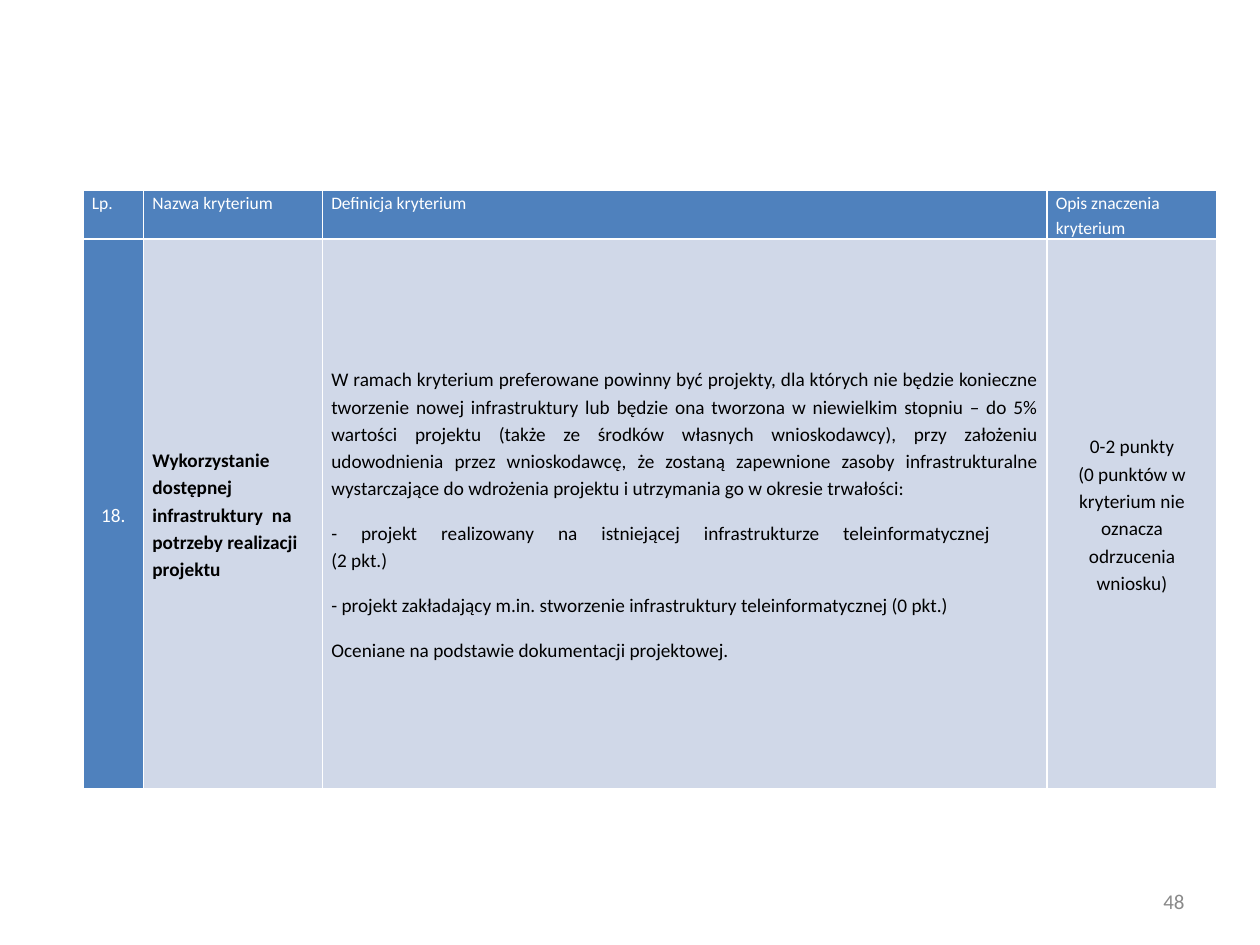
from dataclasses import dataclass

from lxml import etree
from pptx import Presentation
from pptx.dml.color import RGBColor
from pptx.enum import text as t
from pptx.oxml import ns
from pptx.util import Inches, Pt

FONT = "Calibri"
WHITE, BLACK, GREY = "FFFFFF", "000000", "898989"
BLUE, PALE = "4F81BD", "D0D8E8"
LEFT, CENTER, RIGHT, JUSTIFY = (
    t.PP_ALIGN.LEFT, t.PP_ALIGN.CENTER, t.PP_ALIGN.RIGHT, t.PP_ALIGN.JUSTIFY)
TOP, MIDDLE = t.MSO_ANCHOR.TOP, t.MSO_ANCHOR.MIDDLE


@dataclass
class CellSpec:
    paragraphs: list[str]
    fill: str = PALE
    color: str = BLACK
    size: float = 11
    align: t.PP_ALIGN = LEFT
    anchor: t.MSO_ANCHOR = MIDDLE
    space_after: float = 10
    bold: bool = False


def rgb(value: str) -> RGBColor:
    return RGBColor.from_string(value)


def style(paragraph, size: float, color: str, align, bold: bool = False) -> None:
    paragraph.alignment = align
    font = paragraph.font
    font.name, font.size, font.bold = FONT, Pt(size), bold
    font.color.rgb = rgb(color)


def add_borders(cell, color: str = WHITE, width: float = 1) -> None:
    properties = cell._tc.get_or_add_tcPr()
    for index, side in enumerate(("a:lnL", "a:lnR", "a:lnT", "a:lnB")):
        line = etree.Element(ns.qn(side), w=str(Pt(width)))
        fill = etree.SubElement(line, ns.qn("a:solidFill"))
        etree.SubElement(fill, ns.qn("a:srgbClr"), val=color)
        properties.insert(index, line)


def fill_cell(cell, spec: CellSpec) -> None:
    cell.margin_left = cell.margin_right = Inches(0.07)
    cell.margin_top = cell.margin_bottom = 0
    cell.vertical_anchor = spec.anchor
    cell.fill.solid()
    cell.fill.fore_color.rgb = rgb(spec.fill)
    add_borders(cell)
    frame = cell.text_frame
    for index, wording in enumerate(spec.paragraphs):
        paragraph = frame.add_paragraph() if index else frame.paragraphs[0]
        paragraph.text = wording
        paragraph.line_spacing = 1.15
        paragraph.space_after = Pt(spec.space_after)
        style(paragraph, spec.size, spec.color, spec.align, spec.bold)


HEADINGS = ["Lp.", "Nazwa kryterium", "Definicja kryterium",
            "Opis znaczenia kryterium"]
DEFINITION = [
    "W ramach kryterium preferowane powinny być projekty, dla których nie będzie "
    "konieczne tworzenie nowej infrastruktury lub będzie ona tworzona w niewielkim "
    "stopniu – do 5% wartości projektu (także ze środków własnych wnioskodawcy), "
    "przy założeniu udowodnienia przez wnioskodawcę, że zostaną zapewnione zasoby "
    "infrastrukturalne wystarczające do wdrożenia projektu i utrzymania go w okresie "
    "trwałości: ",
    "- projekt realizowany na istniejącej infrastrukturze teleinformatycznej  \v(2 pkt.)",
    "- projekt zakładający m.in. stworzenie infrastruktury teleinformatycznej (0 pkt.)",
    "Oceniane na podstawie dokumentacji projektowej.",
]
SCORING = ["0-2 punkty", "(0 punktów w", "kryterium nie", "oznacza",
           "odrzucenia", "wniosku)"]

ROWS = [
    [CellSpec([heading], BLUE, WHITE, 10, anchor=TOP) for heading in HEADINGS],
    [
        CellSpec(["18."], BLUE, WHITE, align=CENTER, space_after=0),
        CellSpec(["Wykorzystanie dostępnej infrastruktury  na potrzeby realizacji "
                  "projektu"], bold=True),
        CellSpec(DEFINITION, align=JUSTIFY),
        CellSpec(SCORING, align=CENTER, space_after=0),
    ],
]
COLUMN_WIDTHS = [0.48, 1.42, 5.75, 1.35]
ROW_HEIGHTS = [0.38, 4.36]


def main() -> None:
    prs = Presentation()
    prs.slide_width, prs.slide_height = Inches(10), Inches(7.5)
    slide = prs.slides.add_slide(prs.slide_layouts[6])

    # Criteria table
    criteria = slide.shapes.add_table(
        len(ROWS), len(COLUMN_WIDTHS), Inches(0.66), Inches(1.51),
        Inches(sum(COLUMN_WIDTHS)), Inches(sum(ROW_HEIGHTS))).table
    for column, width in zip(criteria.columns, COLUMN_WIDTHS):
        column.width = Inches(width)
    for row, height, specs in zip(criteria.rows, ROW_HEIGHTS, ROWS):
        row.height = Inches(height)
        for cell, spec in zip(row.cells, specs):
            fill_cell(cell, spec)

    # Page number
    page_number = slide.shapes.add_textbox(
        Inches(7.17), Inches(6.95), Inches(2.33), Inches(0.4)).text_frame
    page_number.word_wrap = True
    page_number.vertical_anchor = MIDDLE
    page_number.text = "48"
    style(page_number.paragraphs[0], 12, GREY, RIGHT)

    prs.save("out.pptx")


if __name__ == "__main__":
    main()
